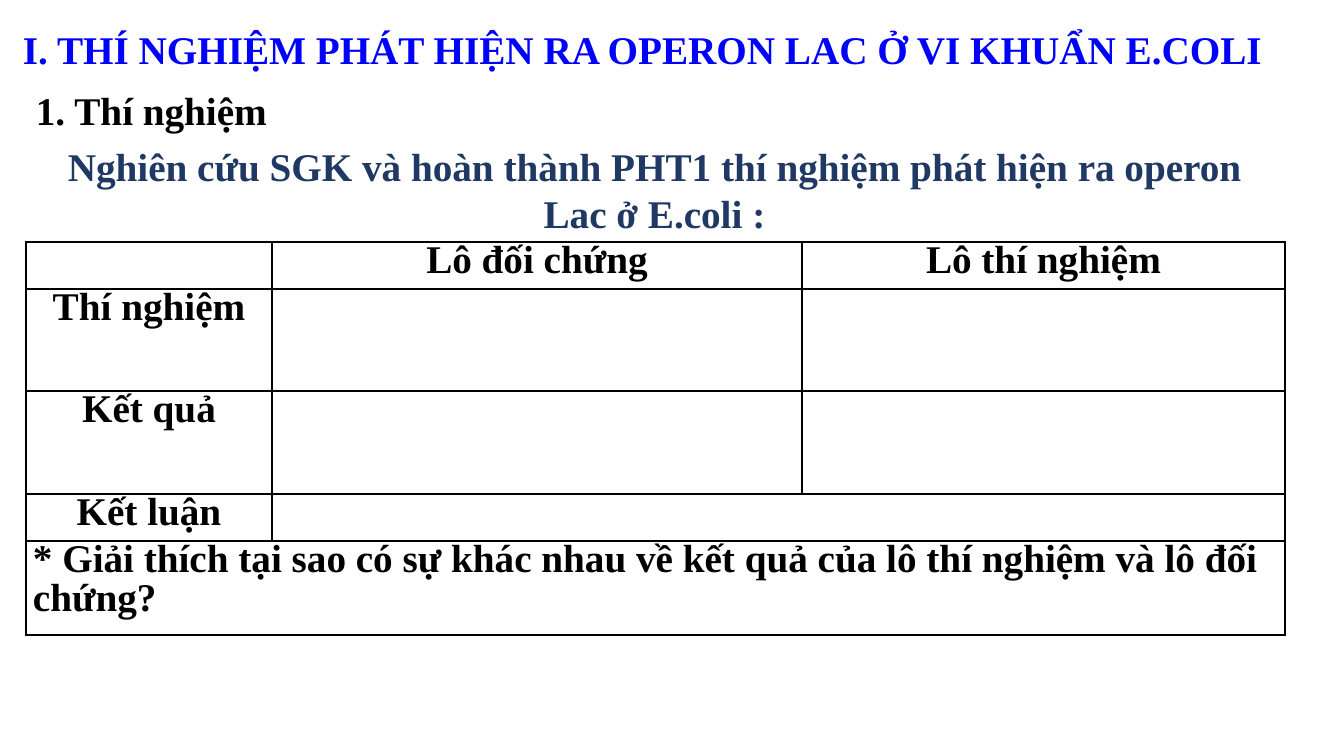
from lxml import etree
from pptx import Presentation
from pptx import util as u
from pptx.dml.color import RGBColor
from pptx.enum import text
from pptx.oxml import ns

PX = 914400 / 100.8
BLACK, WHITE, BLUE, NAVY = "000000", "FFFFFF", "0000FF", "203864"
CENTER = text.PP_ALIGN.CENTER


def px(length):
    return u.Emu(round(length * PX))


def write(paragraph, words, color=BLACK, align=text.PP_ALIGN.LEFT):
    paragraph.alignment = align
    run = paragraph.add_run()
    run.text = words
    run.font.name = "Times New Roman"
    run.font.size = u.Pt(28)
    run.font.bold = True
    run.font.color.rgb = RGBColor.from_string(color)


presentation = Presentation()
presentation.slide_width, presentation.slide_height = px(1344), px(756)
slide = presentation.slides.add_slide(presentation.slide_layouts[6])

# Headings
headings = [
    (13, 20, 1296, 57, BLUE, text.PP_ALIGN.LEFT,
     "I. THÍ NGHIỆM PHÁT HIỆN RA OPERON LAC Ở VI KHUẨN E.COLI"),
    (26, 81, 263, 57, BLACK, text.PP_ALIGN.LEFT, "1. Thí nghiệm"),
    (50, 137, 1209, 105, NAVY, CENTER,
     "Nghiên cứu SGK và hoàn thành PHT1 thí nghiệm phát hiện ra operon Lac ở E.coli :"),
]
for left, top, width, height, color, align, words in headings:
    frame = slide.shapes.add_textbox(px(left), px(top), px(width), px(height)).text_frame
    frame.word_wrap = True
    write(frame.paragraphs[0], words, color, align)

# Worksheet table
question = ("* Giải thích tại sao có sự khác nhau về kết quả của lô thí nghiệm "
            "và lô đối chứng?")
rows = [
    ["", "Lô đối chứng", "Lô thí nghiệm"],
    ["Thí nghiệm", "", ""],
    ["Kết quả", "", ""],
    ["Kết luận", "", ""],
    [question, "", ""],
]
column_widths = [246, 530, 483]
row_heights = [47, 102, 103, 47, 94]
table = slide.shapes.add_table(
    len(rows), len(column_widths), px(26), px(242),
    px(sum(column_widths)), px(sum(row_heights))).table
for column, width in zip(table.columns, column_widths):
    column.width = px(width)
for row, height in zip(table.rows, row_heights):
    row.height = px(height)
table.cell(3, 1).merge(table.cell(3, 2))
table.cell(4, 0).merge(table.cell(4, 2))

for row_index, row in enumerate(rows):
    for column_index, words in enumerate(row):
        cell = table.cell(row_index, column_index)
        properties = cell._tc.get_or_add_tcPr()
        for side in ("lnL", "lnR", "lnT", "lnB"):
            border = etree.SubElement(properties, ns.qn(f"a:{side}"), w=str(u.Pt(1)))
            line_fill = etree.SubElement(border, ns.qn("a:solidFill"))
            etree.SubElement(line_fill, ns.qn("a:srgbClr"), val=BLACK)
        cell.fill.solid()
        cell.fill.fore_color.rgb = RGBColor.from_string(WHITE)
        if not words:
            continue
        cell.margin_left = cell.margin_right = px(7)
        cell.margin_top = cell.margin_bottom = 0
        paragraph = cell.text_frame.paragraphs[0]
        paragraph.line_spacing = 0.9
        if words == question:
            write(paragraph, words)
        else:
            paragraph.space_after = u.Pt(3)
            write(paragraph, words, align=CENTER)

presentation.save("out.pptx")
